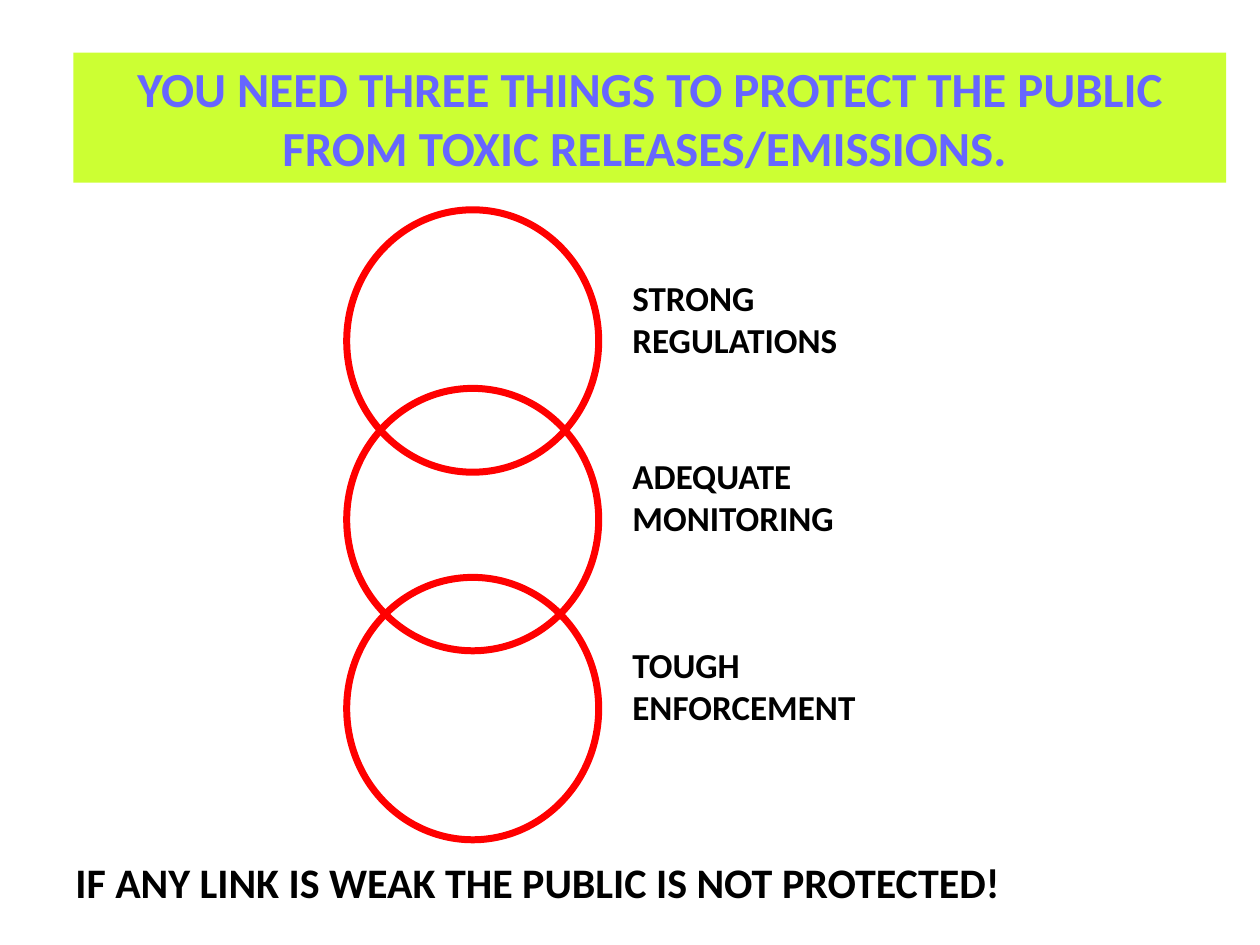
from dataclasses import dataclass

from pptx import Presentation
from pptx.dml.color import RGBColor
from pptx.enum.shapes import MSO_SHAPE as Shp
from pptx.enum.text import MSO_ANCHOR as Anchor, MSO_AUTO_SIZE as AutoSize, PP_ALIGN as Align
from pptx.util import Cm, Pt

RED = RGBColor(0xFF, 0x00, 0x00)
LIME = RGBColor(0xCC, 0xFF, 0x33)
VIOLET = RGBColor(0x66, 0x66, 0xFF)
BLACK = RGBColor(0x00, 0x00, 0x00)
FONT = "Calibri"

# Lengths in centimetres
RING_LEFT, RING_W, RING_H = 6.99, 5.08, 5.29
LABEL_LEFT, LABEL_DROP, LABEL_H = 12.5, 1.21, 1.96


@dataclass
class Link:
    top: float
    label_w: float
    lines: tuple[str, ...]


LINKS = [
    Link(4.23, 5.66, ("STRONG", "REGULATIONS")),
    Link(7.83, 5.11, ("ADEQUATE", "MONITORING")),
    Link(11.64, 5.97, ("TOUGH", "ENFORCEMENT")),
]


def write(tf, lines: tuple[str, ...], size: int, color: RGBColor, align=Align.LEFT) -> None:
    tf.word_wrap = True
    tf.auto_size = AutoSize.SHAPE_TO_FIT_TEXT
    for i, line in enumerate(lines):
        p = tf.paragraphs[0] if i == 0 else tf.add_paragraph()
        p.alignment = align
        r = p.add_run()
        r.text = line
        r.font.name, r.font.size, r.font.bold = FONT, Pt(size), True
        r.font.color.rgb = color


def add_text(s, left: float, top: float, width: float, height: float,
             lines: tuple[str, ...], size: int) -> None:
    sp = s.shapes.add_textbox(Cm(left), Cm(top), Cm(width), Cm(height))
    write(sp.text_frame, lines, size, BLACK)


def add_link(s, link: Link) -> None:
    sp = s.shapes.add_shape(Shp.OVAL, Cm(RING_LEFT), Cm(link.top), Cm(RING_W), Cm(RING_H))
    sp.shadow.inherit = False
    sp.fill.background()
    sp.line.color.rgb = RED
    sp.line.width = Pt(4)
    add_text(s, LABEL_LEFT, link.top + LABEL_DROP, link.label_w, LABEL_H, link.lines, 20)


def add_title(s, text: str) -> None:
    sp = s.shapes.title
    sp.left, sp.top, sp.width, sp.height = Cm(1.48), Cm(1.06), Cm(23.24), Cm(2.62)
    sp.fill.solid()
    sp.fill.fore_color.rgb = LIME
    sp.text_frame.vertical_anchor = Anchor.TOP
    write(sp.text_frame, (text,), 28, VIOLET, Align.CENTER)


def main() -> None:
    prs = Presentation()
    prs.slide_width, prs.slide_height = Cm(25.4), Cm(19.05)
    s = prs.slides.add_slide(prs.slide_layouts[5])

    # Heading banner
    add_title(s, "YOU NEED THREE THINGS TO PROTECT THE PUBLIC FROM TOXIC RELEASES/EMISSIONS. ")

    # Chain of three rings with their labels
    for link in LINKS:
        add_link(s, link)

    # Conclusion
    add_text(s, 1.27, 17.15, 23.44, 1.27,
             ("IF ANY LINK IS WEAK THE PUBLIC IS NOT PROTECTED!",), 24)

    prs.save("out.pptx")


if __name__ == "__main__":
    main()
